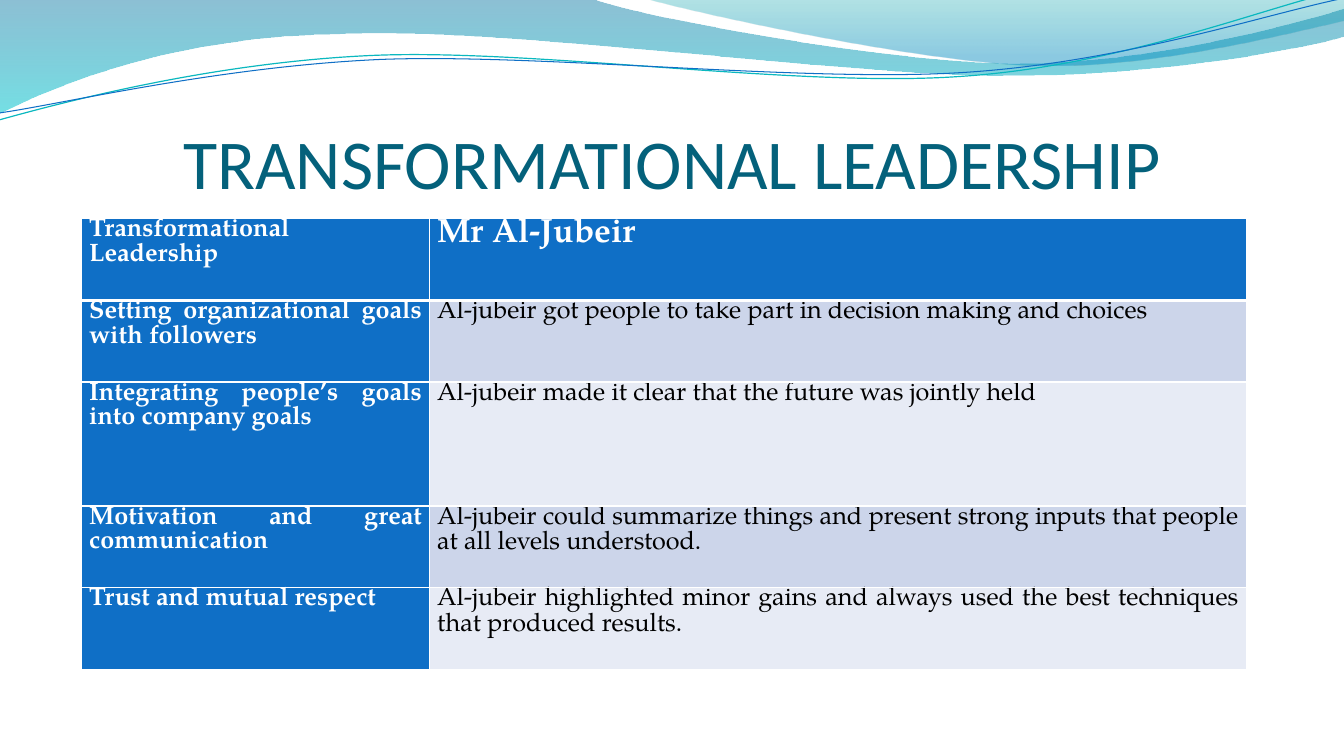
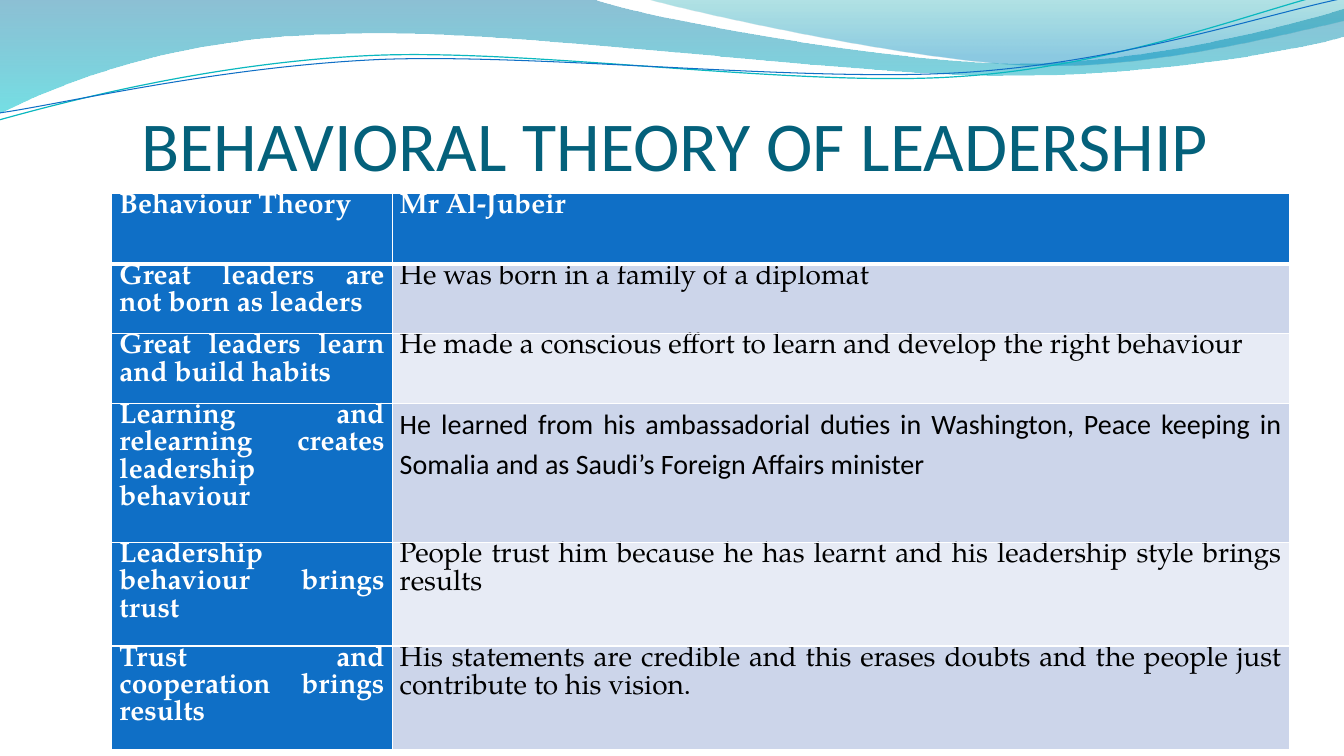
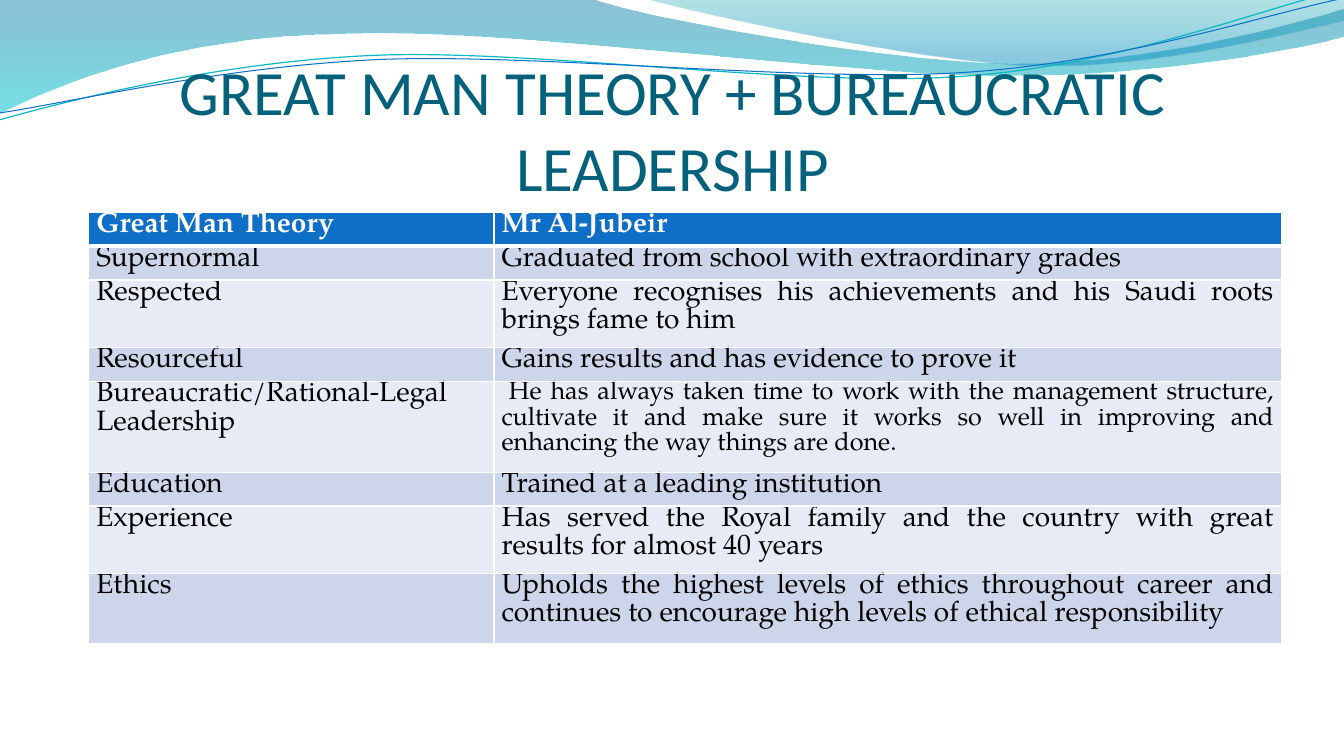
import pptx
import pptx.dml.color
import pptx.enum.text
import pptx.oxml.ns
import pptx.util
from lxml import etree

Inches, Pt = pptx.util.Inches, pptx.util.Pt
ALIGN = pptx.enum.text.PP_ALIGN
ANCHOR = pptx.enum.text.MSO_ANCHOR

TITLE_FONT, TABLE_FONT = "Calibri", "TeX Gyre Pagella"
TITLE_COLOUR, ACCENT, WHITE, BLACK = "04617B", "0F6FC6", "FFFFFF", "000000"
BANDS = ("CCD5EA", "E7EBF5")
CELL_MARGIN = Pt(5.4)

# A step with one point is a straight line, a step with three is a Bezier curve.
WAVE_BANDS = [
    {"start": (0, 0),
     "steps": [[(5.87, -0.01)],
               [(6.34, 0.17), (8.85, 0.63), (10.11, 0.63)],
               [(11.38, 0.63), (12.78, 0.26), (13.33, 0.09)],
               [(13.35, 0.36)],
               [(13.11, 0.44), (11.6, 0.76), (9.94, 0.75)],
               [(8.29, 0.75), (5.09, 0.28), (3.43, 0.34)],
               [(1.72, 0.36), (0.61, 0.83), (-0.01, 1.13)]],
     "stops": [(0, "0074A1", 45), (1, "00C6CF", 55)]},
    {"start": (6.39, -0.01),
     "steps": [[(6.79, 0.11), (9.09, 0.62), (10.25, 0.65)],
               [(11.41, 0.69), (12.82, 0.32), (13.33, 0.21)],
               [(13.33, 0)]],
     "stops": [(0, "00A1A9", 30), (0.8, "008BBF", 45)]},
]
WAVE_LINES = [
    {"start": (-0.01, 1.19),
     "steps": [[(0.64, 1.01), (2.11, 0.62), (3.69, 0.55)],
               [(5.27, 0.48), (7.9, 0.87), (9.5, 0.76)],
               [(11.1, 0.66), (12.52, 0.08), (13.31, -0.1)]],
     "colour": "0AB8BF", "width": 0.85},
    {"start": (0, 1.12),
     "steps": [[(0.63, 1.03), (2.18, 0.66), (3.78, 0.59)],
               [(5.37, 0.53), (7.96, 0.82), (9.55, 0.72)],
               [(11.15, 0.62), (12.55, 0.14), (13.34, -0.02)]],
     "colour": ACCENT, "width": 0.75},
]

# "formats" holds what differs in single cells, by row and column.
SLIDES = [
    {"title": "TRANSFORMATIONAL LEADERSHIP",
     "title_box": (0.67, 0.77, 12, 1.25), "title_size": 50,
     "table_at": (0.81, 2.17), "columns": (3.45, 8.1),
     "heights": (0.81, 0.81, 1.23, 0.81, 0.81),
     "size": 18, "label_column": True,
     "formats": {(0, 1): {"size": 24}},
     "rows": [
         ("Transformational Leadership", "Mr Al-Jubeir"),
         ("Setting organizational goals with followers",
          "Al-jubeir got people to take part in decision making and choices"),
         ("Integrating people’s goals into company goals",
          "Al-jubeir made it clear that the future was jointly held"),
         ("Motivation and great communication",
          "Al-jubeir could summarize things and present strong inputs that "
          "people at all levels understood."),
         ("Trust and mutual respect",
          "Al-jubeir highlighted minor gains and always used the best "
          "techniques that produced results."),
     ]},
    {"title": "BEHAVIORAL THEORY OF LEADERSHIP",
     "title_box": (1.2, 0.25, 11, 1.59), "title_size": 50,
     "table_at": (1.11, 1.92), "columns": (2.78, 8.9),
     "heights": (0.7, 0.69, 0.69, 1.38, 1.03, 1.03),
     "size": 20, "label_column": True,
     "formats": {(3, 1): {"font": TITLE_FONT, "line_spacing": 1.15}},
     "rows": [
         ("Behaviour Theory", "Mr Al-Jubeir"),
         ("Great leaders are not born as leaders",
          "He was born in a family of a diplomat"),
         ("Great leaders learn and build habits",
          "He made a conscious effort to learn and develop the right behaviour"),
         ("Learning and relearning creates leadership behaviour",
          "He learned from his ambassadorial duties in Washington, Peace "
          "keeping in Somalia and as Saudi’s Foreign Affairs minister"),
         ("Leadership behaviour brings trust",
          "People trust him because he has learnt and his leadership style "
          "brings results"),
         ("Trust and cooperation brings results",
          "His statements are credible and this erases doubts and the people "
          "just contribute to his vision."),
     ]},
    {"title": "GREAT MAN THEORY + BUREAUCRATIC LEADERSHIP",
     "title_box": (0.67, 0.77, 12, 1.25), "title_size": 45,
     "table_at": (0.88, 2.11), "columns": (4.02, 7.81),
     "heights": (0.33, 0.32, 0.64, 0.34, 0.9, 0.32, 0.64, 0.7),
     "size": 20, "label_column": False,
     "formats": {(4, 1): {"size": 18, "indent": 0.07}},
     "rows": [
         ("Great Man Theory", "Mr Al-Jubeir"),
         ("Supernormal", "Graduated from school with extraordinary grades"),
         ("Respected",
          "Everyone recognises his achievements and his Saudi roots brings "
          "fame to him"),
         ("Resourceful", "Gains results and has evidence to prove it"),
         ("Bureaucratic/Rational-Legal Leadership",
          "He has always taken time to work with the management structure, "
          "cultivate it and make sure it works so well in improving and "
          "enhancing the way things are done."),
         ("Education", "Trained at a leading institution"),
         ("Experience",
          "Has served the Royal family and the country with great results "
          "for almost 40 years"),
         ("Ethics",
          "Upholds the highest levels of ethics throughout career and "
          "continues to encourage high levels of ethical responsibility"),
     ]},
]


def rgb(colour):
    return pptx.dml.color.RGBColor.from_string(colour)


def add_element(parent, tag, **attributes):
    element = etree.SubElement(parent, pptx.oxml.ns.qn(tag))
    for name, value in attributes.items():
        element.set(name, str(value))
    return element


def write_text(frame, text, font=TABLE_FONT, size=20, colour=BLACK, bold=False,
               align=ALIGN.JUSTIFY, line_spacing=1.0, indent=0):
    frame.word_wrap = True
    paragraph = frame.paragraphs[0]
    paragraph.alignment = align
    paragraph.line_spacing = line_spacing
    if indent:
        paragraph._p.get_or_add_pPr().set("indent", str(Inches(indent)))
    run = paragraph.add_run()
    run.text = text
    run.font.name = font
    run.font.size = Pt(size)
    run.font.bold = bold
    run.font.color.rgb = rgb(colour)


def bend_lines(shape, steps):
    """Turn the three lines of each three-point step into one Bezier curve."""
    path = next(shape.element.iter(pptx.oxml.ns.qn("a:path")))
    lines = iter(path.findall(pptx.oxml.ns.qn("a:lnTo")))
    for step in steps:
        step_lines = [next(lines) for _ in step]
        if len(step) == 3:
            curve = add_element(path, "a:cubicBezTo")
            step_lines[0].addprevious(curve)
            for line in step_lines:
                curve.append(line[0])
                path.remove(line)


def add_outline(slide, wave, close):
    points = [wave["start"]] + [point for step in wave["steps"] for point in step]
    points = [(Inches(x), Inches(y)) for x, y in points]
    builder = slide.shapes.build_freeform(*points[0])
    builder.add_line_segments(points[1:], close=close)
    shape = builder.convert_to_shape()
    bend_lines(shape, wave["steps"])
    shape.shadow.inherit = False
    return shape


def add_wave_band(slide, wave):
    shape = add_outline(slide, wave, close=True)
    shape.line.fill.background()
    shape.fill.gradient()
    shape.fill.gradient_angle = 270
    for stop, (position, colour, _) in zip(shape.fill.gradient_stops, wave["stops"]):
        stop.position = position
        stop.color.rgb = rgb(colour)
    colour_elements = shape.element.spPr.iter(pptx.oxml.ns.qn("a:srgbClr"))
    for element, (_, _, opacity) in zip(colour_elements, wave["stops"]):
        add_element(element, "a:alpha", val=opacity * 1000)
    return shape


def add_wave_line(slide, wave):
    shape = add_outline(slide, wave, close=False)
    shape.fill.background()
    shape.line.color.rgb = rgb(wave["colour"])
    shape.line.width = Pt(wave["width"])
    return shape


def decorate_layout(layout, slide):
    """Draw the waves on the slide, then move them to its layout."""
    for placeholder in list(layout.placeholders):
        layout.shapes.element.remove(placeholder.element)
    waves = [add_wave_band(slide, wave) for wave in WAVE_BANDS]
    waves += [add_wave_line(slide, wave) for wave in WAVE_LINES]
    for shape in waves:
        layout.shapes.element.append(shape.element)


def add_title(slide, content):
    box = slide.shapes.add_textbox(*map(Inches, content["title_box"]))
    frame = box.text_frame
    frame.vertical_anchor = ANCHOR.BOTTOM
    frame.margin_left = frame.margin_right = frame.margin_bottom = 0
    frame.margin_top = Inches(0.05)
    write_text(frame, content["title"], font=TITLE_FONT, align=ALIGN.CENTER,
               size=content["title_size"], colour=TITLE_COLOUR)


def set_borders(cell, row):
    widths = {"L": 1, "R": 1, "T": 3 if row == 1 else 1, "B": 3 if row == 0 else 1}
    properties = cell._tc.get_or_add_tcPr()
    for side, width in widths.items():
        line = add_element(properties, f"a:ln{side}", w=Pt(width))
        add_element(add_element(line, "a:solidFill"), "a:srgbClr", val=WHITE)


def add_comparison_table(slide, content):
    rows, columns, heights = content["rows"], content["columns"], content["heights"]
    left, top = content["table_at"]
    table = slide.shapes.add_table(
        len(rows), len(columns), Inches(left), Inches(top),
        Inches(sum(columns)), Inches(sum(heights))).table
    table.horz_banding = False
    for column, width in zip(table.columns, columns):
        column.width = Inches(width)
    for row, (texts, height) in enumerate(zip(rows, heights)):
        table.rows[row].height = Inches(height)
        for column, text in enumerate(texts):
            cell = table.cell(row, column)
            heading = row == 0 or (column == 0 and content["label_column"])
            set_borders(cell, row)
            cell.fill.solid()
            cell.fill.fore_color.rgb = rgb(ACCENT if heading else BANDS[(row - 1) % 2])
            cell.margin_left = cell.margin_right = CELL_MARGIN
            cell.margin_top = cell.margin_bottom = 0
            text_format = {"size": content["size"], "bold": heading,
                           "colour": WHITE if heading else BLACK}
            text_format.update(content["formats"].get((row, column), {}))
            write_text(cell.text_frame, text, **text_format)


def main():
    presentation = pptx.Presentation()
    presentation.slide_width = Inches(13.33)
    presentation.slide_height = Inches(7.5)
    layout = presentation.slide_layouts[6]
    for number, content in enumerate(SLIDES):
        slide = presentation.slides.add_slide(layout)
        if number == 0:
            decorate_layout(layout, slide)
        add_title(slide, content)
        add_comparison_table(slide, content)
    presentation.save("out.pptx")


if __name__ == "__main__":
    main()
